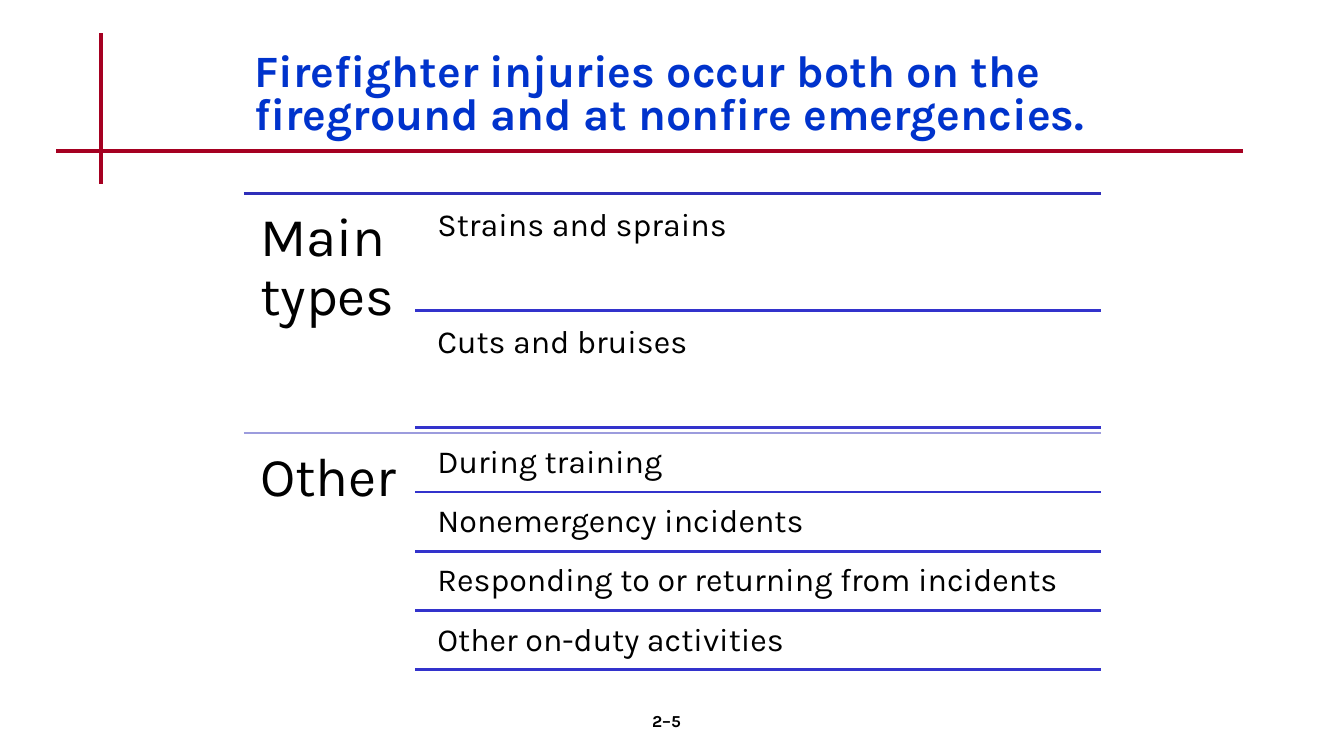
from lxml.etree import SubElement
from pptx import Presentation
from pptx.dml.color import RGBColor
from pptx.enum.shapes import MSO_CONNECTOR
from pptx.enum.text import MSO_ANCHOR, PP_ALIGN
from pptx.oxml.ns import qn
from pptx.util import Inches, Pt

# Content
TITLE = "Firefighter injuries occur both on the fireground and at nonfire emergencies."
PAGE_NUMBER = "2–5"

RED = RGBColor(0xA5, 0x00, 0x21)
TITLE_BLUE = RGBColor(0x00, 0x33, 0xCC)
DARK_BLUE = RGBColor(0x2E, 0x2E, 0xB9)
BLUE = RGBColor(0x33, 0x33, 0xCC)
PALE_BLUE = RGBColor(0x9C, 0x9C, 0xDD)
BLACK = RGBColor(0, 0, 0)
FONT = "Karla"

SECTIONS = [
    ("Main types", DARK_BLUE, ["Strains and sprains", "Cuts and bruises"]),
    ("Other", PALE_BLUE, [
        "During training",
        "Nonemergency incidents",
        "Responding to or returning from incidents",
        "Other on-duty activities",
    ]),
]

# Layout, in inches
LEFT, RIGHT, TOP = 2.42, 10.92, 1.92
SECTION_HEIGHT = 2.375
HEADING_WIDTH = 1.7
ITEM_LEFT, ITEM_WIDTH = 4.24, 6.67
GAP_SHARE = 0.05  # gap above each item, as a share of its height

prs = Presentation()
prs.slide_width, prs.slide_height = Inches(13.33), Inches(7.5)
slide = prs.slides.add_slide(prs.slide_layouts[5])


def add_rule(x1, y1, x2, y2, color, width):
    rule = slide.shapes.add_connector(
        MSO_CONNECTOR.STRAIGHT, Inches(x1), Inches(y1), Inches(x2), Inches(y2))
    rule.line.color.rgb = color
    rule.line.width = Pt(width)
    SubElement(rule._element.spPr, qn("a:effectLst"))


def style(paragraph, size, color=BLACK, bold=False, spacing=1.0):
    paragraph.line_spacing = spacing
    font = paragraph.font
    font.name, font.size, font.bold = FONT, Pt(size), bold
    font.color.rgb = color


def add_text(text, x, y, width, height, size, inset):
    box = slide.shapes.add_textbox(Inches(x), Inches(y), Inches(width), Inches(height))
    frame = box.text_frame
    frame.word_wrap = True
    frame.margin_left = frame.margin_right = Inches(inset)
    frame.margin_top = frame.margin_bottom = Inches(inset)
    frame.text = text
    style(frame.paragraphs[0], size, spacing=0.9)
    return frame


# Crossed red lines
add_rule(1, 0.33, 1, 1.83, RED, 3)
add_rule(0.56, 1.5, 12.33, 1.5, RED, 3)

# Title
title = slide.shapes.title
title.left, title.top = Inches(2.42), Inches(0.33)
title.width, title.height = Inches(9.17), Inches(1.25)
title.text_frame.text = TITLE
title.text_frame.word_wrap = True
title.text_frame.vertical_anchor = MSO_ANCHOR.MIDDLE
title.text_frame.paragraphs[0].alignment = PP_ALIGN.LEFT
style(title.text_frame.paragraphs[0], 32, TITLE_BLUE, bold=True, spacing=0.8)

# Sections: a heading on the left, ruled items on the right
for index, (heading, rule_color, items) in enumerate(SECTIONS):
    top = TOP + index * SECTION_HEIGHT
    add_rule(LEFT, top, RIGHT, top, rule_color, 2)
    add_text(heading, LEFT, top, HEADING_WIDTH, SECTION_HEIGHT, 39, 0.16)
    item_height = SECTION_HEIGHT / (len(items) * (1 + GAP_SHARE) + GAP_SHARE)
    gap = item_height * GAP_SHARE
    for row, item in enumerate(items):
        item_top = top + gap + row * (item_height + gap)
        item_bottom = item_top + item_height
        add_text(item, ITEM_LEFT, item_top, ITEM_WIDTH, item_height, 23, 0.1)
        add_rule(LEFT + HEADING_WIDTH, item_bottom, RIGHT, item_bottom, BLUE, 2)

# Page number
page_number = add_text(PAGE_NUMBER, 5.22, 7, 2.78, 0.5, 12, 0.05).paragraphs[0]
page_number.alignment = PP_ALIGN.CENTER
style(page_number, 12, bold=True)

prs.save("out.pptx")
